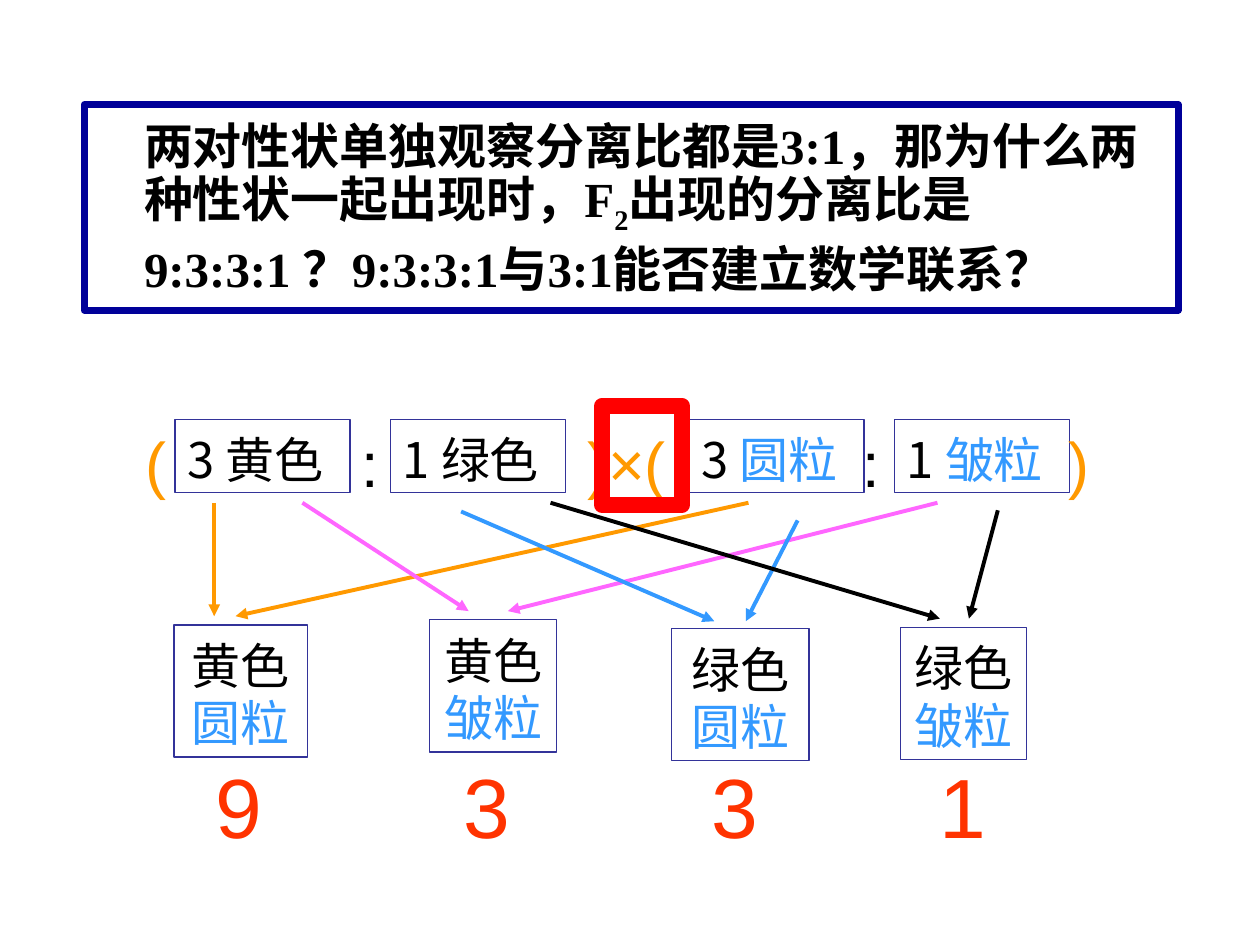
import pptx
import pptx.dml.color
import pptx.enum.shapes
import pptx.enum.text
import pptx.oxml.ns
import pptx.util
from lxml import etree

Pt = pptx.util.Pt
qn = pptx.oxml.ns.qn
CJK, ARIAL, TIMES = "Noto Sans CJK SC", "Arial", "Times New Roman"
BLACK, BLUE, ORANGE, PINK, RED = "000000", "3399FF", "FF9900", "FF66FF", "FF3300"


def rgb(value):
    """Turn a hex string into a colour."""
    return pptx.dml.color.RGBColor.from_string(value)


def add_rect(slide, x, y, w, h, line, width):
    """Add an unfilled, outlined rectangle."""
    sp = slide.shapes.add_shape(
        pptx.enum.shapes.MSO_SHAPE.RECTANGLE, Pt(x), Pt(y), Pt(w), Pt(h))
    sp.shadow.inherit = False
    sp.fill.background()
    sp.line.color.rgb = rgb(line)
    sp.line.width = Pt(width)
    return sp


def set_frame(sp, top=6.5, right=0):
    """Prepare the text frame of a shape and return it."""
    tf = sp.text_frame
    tf.word_wrap = True
    tf.vertical_anchor = pptx.enum.text.MSO_ANCHOR.TOP
    tf.margin_left, tf.margin_right = Pt(7.2), Pt(right)
    tf.margin_top, tf.margin_bottom = Pt(top), Pt(0)
    return tf


def set_paragraph(p, centred=False, spacing=None):
    """Set the alignment and line spacing of a paragraph."""
    align = pptx.enum.text.PP_ALIGN
    p.alignment = align.CENTER if centred else align.LEFT
    if spacing:
        p.line_spacing = Pt(spacing)


def add_run(p, text, size, font, color, bold=False, baseline=0):
    """Add one formatted run."""
    r = p.add_run()
    r.text = text
    r.font.size, r.font.name, r.font.bold = Pt(size), font, bold
    r.font.color.rgb = rgb(color)
    rpr = r.font._element
    if baseline:
        rpr.set("baseline", str(baseline * 1000))
    rpr.find(qn("a:latin")).addnext(
        etree.Element(qn("a:ea"), typeface=CJK))


def add_label(slide, x, y, w, h, text, size, color, top=6.5):
    """Add a one-line text box and return its paragraph."""
    sp = slide.shapes.add_textbox(Pt(x), Pt(y), Pt(w), Pt(h))
    p = set_frame(sp, top).paragraphs[0]
    set_paragraph(p)
    add_run(p, text, size, ARIAL, color)
    return p


def add_tabs(p, positions):
    """Set left tab stops on a paragraph."""
    tabs = etree.SubElement(p._p.get_or_add_pPr(), qn("a:tabLst"))
    for pos in positions:
        etree.SubElement(tabs, qn("a:tab"), pos=str(Pt(pos)), algn="l")


def add_factor(slide, x, number, trait, color):
    """Add a box with one term of a 3:1 ratio."""
    sp = add_rect(slide, x, 239.8, 100, 41.8, "333399", 0.75)
    p = set_frame(sp).paragraphs[0]
    set_paragraph(p, spacing=33)
    add_run(p, number + " ", 28, CJK, BLACK)
    add_run(p, trait, 28, CJK, color)


def add_result(slide, x, y, w, colour_trait, shape_trait):
    """Add a box with a combined phenotype."""
    tf = set_frame(add_rect(slide, x, y, w, 75.5, "333399", 0.75), right=7.2)
    pairs = ((tf.paragraphs[0], colour_trait, BLACK),
             (tf.add_paragraph(), shape_trait, BLUE))
    for p, trait, color in pairs:
        set_paragraph(p, centred=True, spacing=33)
        add_run(p, trait, 28, CJK, color)


def add_arrow(slide, start, end, color):
    """Add a straight arrow."""
    cx = slide.shapes.add_connector(
        pptx.enum.shapes.MSO_CONNECTOR.STRAIGHT,
        *(Pt(v) for v in start + end))
    cx.line.color.rgb = rgb(color)
    cx.line.width = Pt(2.25)
    etree.SubElement(cx.line._get_or_add_ln(), qn("a:tailEnd"), type="triangle")
    etree.SubElement(cx._element.spPr, qn("a:effectLst"))


def add_question(slide):
    """Add the framed question."""
    sp = add_rect(slide, 48.2, 59.8, 625, 117.4, "000099", 4)
    p = set_frame(sp, 5, 7.2).paragraphs[0]
    set_paragraph(p, spacing=35)
    p._p.get_or_add_pPr().set("marL", str(Pt(27)))
    runs = (("两对性状单独观察分离比都是3:1，那为什么两种性状一起出现时，F", 0),
            ("2", -25),
            ("出现的分离比是9:3:3:1 ？9:3:3:1与3:1能否建立数学联系？", 0))
    for text, baseline in runs:
        add_run(p, text, 28, TIMES, BLACK, True, baseline)


def main():
    """Build the slide and save it."""
    prs = pptx.Presentation()
    prs.slide_width, prs.slide_height = Pt(720), Pt(540)
    slide = prs.slides.add_slide(prs.slide_layouts[6])

    for factor in ((393.8, "3", "圆粒", BLUE), (511.2, "1", "皱粒", BLUE),
                   (223.2, "1", "绿色", BLACK), (100, "3", "黄色", BLACK)):
        add_factor(slide, *factor)
    p = add_label(slide, 76.3, 236.2, 575.3, 50.4, "(\t)×(\t)", 36, ORANGE)
    add_tabs(p, (252.2, 527.4))
    for x in (199.4, 486):
        add_label(slide, x, 236.2, 18.7, 50.4, ":", 36, BLACK)

    for result in ((99.4, 357.1, 76.3, "黄色", "圆粒"),
                   (245.5, 354.2, 72.7, "黄色", "皱粒"),
                   (383.8, 359.3, 78.5, "绿色", "圆粒"),
                   (514.8, 358.6, 72, "绿色", "皱粒")):
        add_result(slide, *result)
    for arrow in (((122.4, 287.3), (122.4, 352.1), ORANGE),
                  ((427.7, 287.3), (134.6, 352.1), ORANGE),
                  ((172.8, 287.3), (267.8, 349.2), PINK),
                  ((535.7, 287.3), (290.2, 349.2), PINK),
                  ((263.5, 292.3), (408.2, 355), BLUE),
                  ((455.8, 297.4), (426.2, 355), BLUE),
                  ((314.6, 287.3), (537.1, 353.5), BLACK),
                  ((570.2, 291.6), (553.7, 353.5), BLACK)):
        add_arrow(slide, *arrow)
    for x, count in ((115.9, "9"), (257.8, "3"), (399.6, "3"), (529.9, "1")):
        add_label(slide, x, 423.4, 52.6, 64.8, count, 48, RED, top=8)

    add_question(slide)
    add_rect(slide, 344.2, 231.8, 45.4, 56.9, "FF0000", 9)
    prs.save("out.pptx")


if __name__ == "__main__":
    main()
